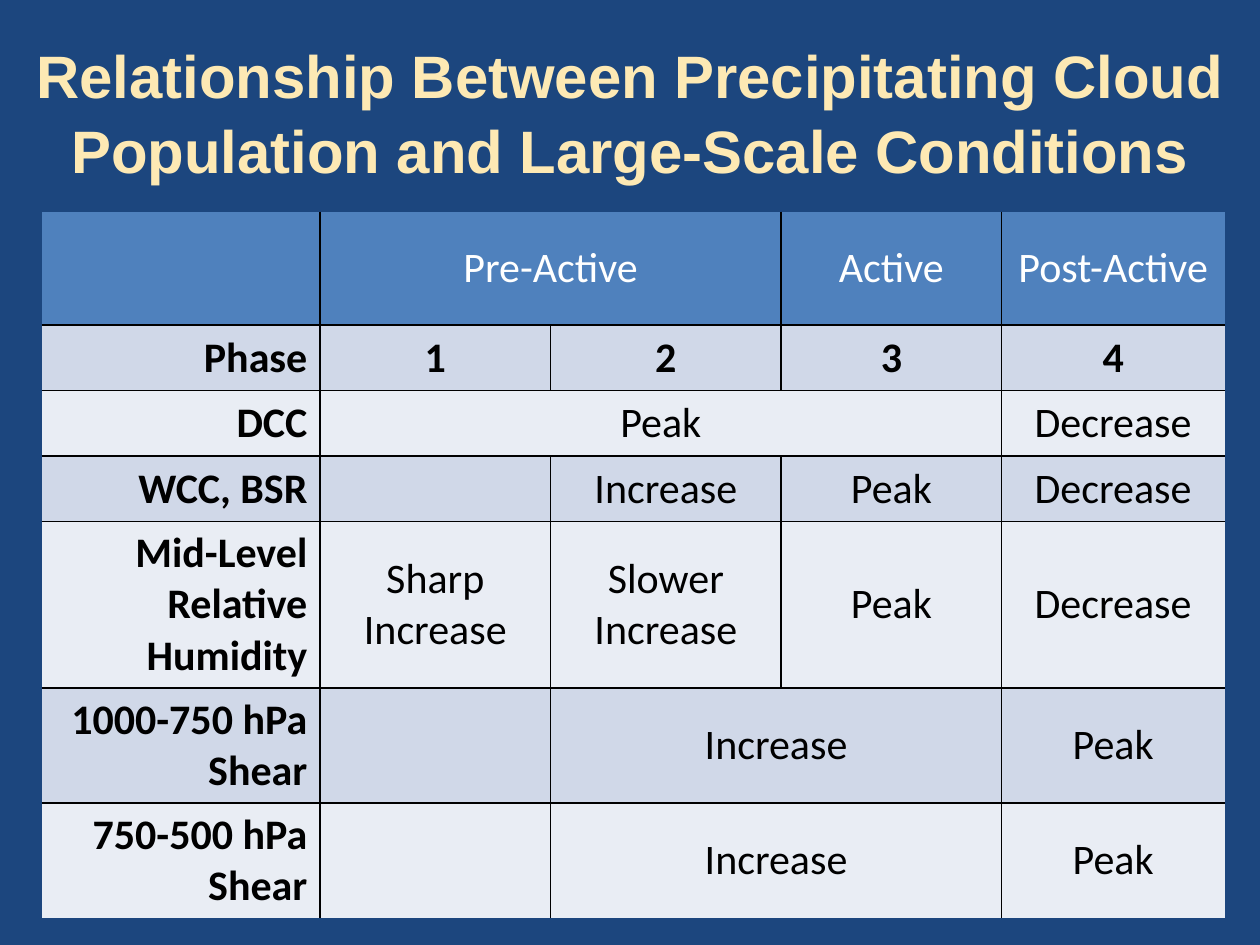
from lxml.etree import SubElement
from pptx import Presentation
from pptx.dml.color import RGBColor
from pptx.enum.text import MSO_ANCHOR, MSO_AUTO_SIZE, PP_ALIGN
from pptx.oxml.ns import qn
from pptx.util import Inches, Pt

NAVY = RGBColor(0x1C, 0x46, 0x7E)
CREAM = RGBColor(0xFD, 0xE9, 0xB4)
HEADER_BLUE = RGBColor(0x4F, 0x81, 0xBD)
BANDS = [RGBColor(0xE9, 0xED, 0xF4), RGBColor(0xD0, 0xD8, 0xE8)]
WHITE = RGBColor(0xFF, 0xFF, 0xFF)
BLACK = RGBColor(0, 0, 0)

TITLE = "Relationship Between Precipitating Cloud Population and Large-Scale Conditions"
COLUMN_WIDTHS = [2.21, 1.83, 1.83, 1.75, 1.77]
# Height and cells of each row; None continues the cell to its left
ROWS = [
    (0.9, ["", "Pre-Active", None, "Active", "Post-Active"]),
    (0.52, ["Phase", "1", "2", "3", "4"]),
    (0.52, ["DCC", "Peak", None, None, "Decrease"]),
    (0.52, ["WCC, BSR", "", "Increase", "Peak", "Decrease"]),
    (1.3, ["Mid-Level Relative Humidity", "Sharp Increase", "Slower Increase", "Peak", "Decrease"]),
    (0.9, ["1000-750 hPa Shear", "", "Increase", None, "Peak"]),
    (0.9, ["750-500 hPa Shear", "", "Increase", None, "Peak"]),
]
LAST_ROW, LAST_COLUMN = len(ROWS) - 1, len(COLUMN_WIDTHS) - 1


def add_run(paragraph, text, font_name, size, color, bold):
    run = paragraph.add_run()
    run.text = text
    run.font.name = font_name
    run.font.size = Pt(size)
    run.font.color.rgb = color
    run.font.bold = bold


def set_borders(cell, visible_sides):
    """Draw the visible sides (in schema order) in black and blank the others."""
    properties = cell._tc.get_or_add_tcPr()
    for side, visible in visible_sides.items():
        line = SubElement(properties, qn(f"a:ln{side}"), w=str(Pt(1)))
        if visible:
            fill = SubElement(line, qn("a:solidFill"))
            SubElement(fill, qn("a:srgbClr"), val=str(BLACK))
        else:
            SubElement(line, qn("a:noFill"))


def add_title(slide):
    title = slide.shapes.title
    title.left, title.top = Inches(0), Inches(0.25)
    title.width, title.height = Inches(10), Inches(1.25)
    frame = title.text_frame
    frame.word_wrap = True
    frame.auto_size = MSO_AUTO_SIZE.NONE
    frame.vertical_anchor = MSO_ANCHOR.MIDDLE
    paragraph = frame.paragraphs[0]
    paragraph.alignment = PP_ALIGN.CENTER
    paragraph.line_spacing = 1.05
    add_run(paragraph, TITLE, "Arial", 34.2, CREAM, True)


def fill_cell(cell, text, row, column):
    set_borders(cell, {
        "L": column > 0 and text is not None,
        "R": column < LAST_COLUMN and text is not None,
        "T": row > 0,
        "B": row < LAST_ROW,
    })
    cell.fill.solid()
    cell.fill.fore_color.rgb = BANDS[row % 2] if row else HEADER_BLUE
    cell.vertical_anchor = MSO_ANCHOR.MIDDLE
    if text:
        paragraph = cell.text_frame.paragraphs[0]
        paragraph.alignment = PP_ALIGN.CENTER if column else PP_ALIGN.RIGHT
        bold = row == 1 or column == 0
        add_run(paragraph, text, "Calibri", 24, BLACK if row else WHITE, bold)


def add_conditions_table(slide):
    height = sum(row_height for row_height, _ in ROWS)
    table = slide.shapes.add_table(
        len(ROWS), len(COLUMN_WIDTHS), Inches(0.33), Inches(1.68),
        Inches(sum(COLUMN_WIDTHS)), Inches(height)).table
    table.first_row = table.horz_banding = False
    for column, width in zip(table.columns, COLUMN_WIDTHS):
        column.width = Inches(width)
    for row, (row_height, texts) in enumerate(ROWS):
        table.rows[row].height = Inches(row_height)
        for column, text in enumerate(texts):
            fill_cell(table.cell(row, column), text, row, column)
            end = column
            while end < LAST_COLUMN and texts[end + 1] is None:
                end += 1
            if text is not None and end > column:
                table.cell(row, column).merge(table.cell(row, end))


def main():
    presentation = Presentation()
    presentation.slide_width, presentation.slide_height = Inches(10), Inches(7.5)
    slide = presentation.slides.add_slide(presentation.slide_layouts[5])
    slide.background.fill.solid()
    slide.background.fill.fore_color.rgb = NAVY
    add_title(slide)
    add_conditions_table(slide)
    presentation.save("out.pptx")


if __name__ == "__main__":
    main()
